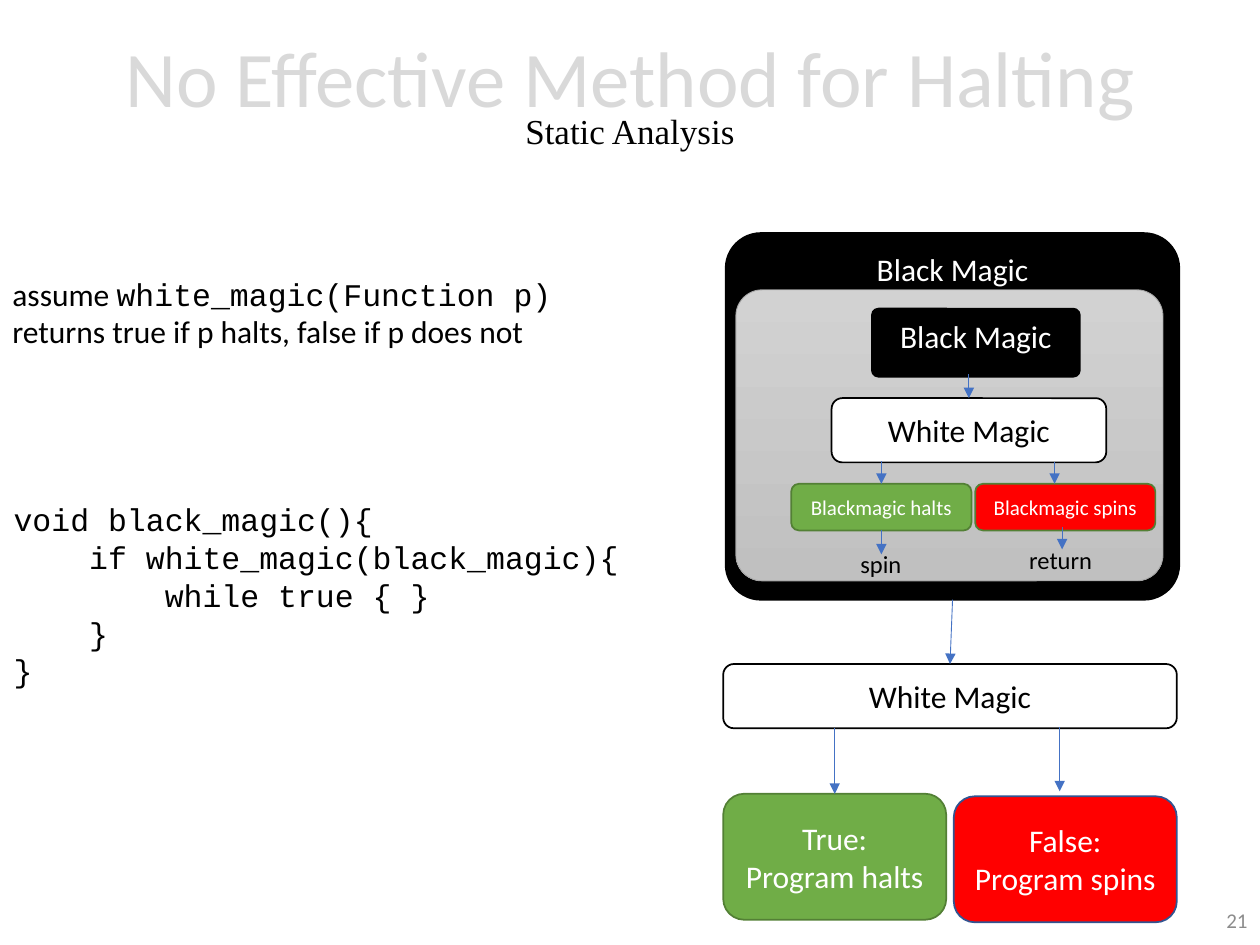
from dataclasses import dataclass
from typing import Optional

import pptx
import pptx.dml.color
import pptx.enum.shapes
import pptx.enum.text
import pptx.oxml
import pptx.oxml.ns
import pptx.util

Align = pptx.enum.text.PP_ALIGN
Anchor = pptx.enum.text.MSO_ANCHOR
Fit = pptx.enum.text.MSO_AUTO_SIZE
Pt = pptx.util.Pt

COLS, ROWS = 100, 75
WIDE, HIGH = pptx.util.Inches(10), pptx.util.Inches(7.5)


@dataclass(frozen=True)
class Theme:
    sans: str = "Calibri"
    mono: str = "Courier New"
    serif: str = "Times New Roman"
    black: str = "000000"
    white: str = "FFFFFF"
    green: str = "70AD47"
    moss: str = "538035"
    red: str = "FF0000"
    navy: str = "325491"
    blue: str = "4472C4"
    pale: str = "D9D9D9"
    gray: str = "8C8C8C"
    rim: str = "A5A5A5"
    light: str = "D2D2D2"
    dark: str = "C0C0C0"
    head: int = 45
    sub: int = 20
    body: int = 18
    note: int = 14
    small: int = 12


T = Theme()


@dataclass(frozen=True)
class Box:
    """A rounded box; lengths are grid columns and rows."""
    key: str
    x: float
    y: float
    w: float
    h: float
    lines: tuple[str, ...]
    fill: str
    edge: str
    ink: str = T.white
    size: int = T.body
    anchor: Anchor = Anchor.MIDDLE
    bend: Optional[float] = None
    fade: Optional[str] = None
    rule: float = 1


@dataclass(frozen=True)
class Arrow:
    """A downward arrow; start and end are keys of the boxes it is joined to."""
    x: float
    top: float
    foot: float
    start: Optional[str] = None
    end: Optional[str] = None


@dataclass(frozen=True)
class Note:
    x: float
    y: float
    w: float
    h: float
    lines: tuple[tuple[tuple[str, str], ...], ...]
    size: int = T.body


def col(n: float) -> int:
    return round(WIDE * n / COLS)


def row(n: float) -> int:
    return round(HIGH * n / ROWS)


def rgb(code: str) -> pptx.dml.color.RGBColor:
    return pptx.dml.color.RGBColor.from_string(code)


def add_run(para, text: str, font: str, size: int, ink: str) -> None:
    run = para.add_run()
    run.text = text
    run.font.name = font
    run.font.size = Pt(size)
    run.font.color.rgb = rgb(ink)


def next_para(frame, i: int):
    return frame.add_paragraph() if i else frame.paragraphs[0]


def add_box(slide, box: Box):
    shape = slide.shapes.add_shape(
        pptx.enum.shapes.MSO_SHAPE.ROUNDED_RECTANGLE,
        col(box.x), row(box.y), col(box.w), row(box.h))
    shape.shadow.inherit = False
    if box.bend is not None:
        shape.adjustments[0] = box.bend
    if box.fade:
        shape.fill.gradient()
        shape.fill.gradient_angle = 270
        for stop, code in zip(shape.fill.gradient_stops, (box.fill, box.fade)):
            stop.color.rgb = rgb(code)
            stop.position = float(code == box.fade)
    else:
        shape.fill.solid()
        shape.fill.fore_color.rgb = rgb(box.fill)
    shape.line.color.rgb = rgb(box.edge)
    shape.line.width = Pt(box.rule)
    frame = shape.text_frame
    frame.vertical_anchor = box.anchor
    for i, text in enumerate(box.lines):
        para = next_para(frame, i)
        para.alignment = Align.CENTER
        add_run(para, text, T.sans, box.size, box.ink)
    return shape


def add_arrow(slide, arrow: Arrow, made: dict) -> None:
    line = slide.shapes.add_connector(
        pptx.enum.shapes.MSO_CONNECTOR.STRAIGHT,
        col(arrow.x), row(arrow.top), col(arrow.x), row(arrow.foot))
    if arrow.start:
        line.begin_connect(made[arrow.start], 2)
    if arrow.end:
        line.end_connect(made[arrow.end], 0)
    line.line.color.rgb = rgb(T.blue)
    line.line.width = Pt(0.5)
    space = pptx.oxml.ns.nsdecls("a")
    line.line._get_or_add_ln().append(
        pptx.oxml.parse_xml(f'<a:tailEnd {space} type="triangle"/>'))
    line._element.spPr.append(pptx.oxml.parse_xml(f"<a:effectLst {space}/>"))


def add_note(slide, note: Note) -> None:
    frame = slide.shapes.add_textbox(
        col(note.x), row(note.y), col(note.w), row(note.h)).text_frame
    frame.word_wrap = False
    frame.auto_size = Fit.SHAPE_TO_FIT_TEXT
    for i, runs in enumerate(note.lines):
        para = next_para(frame, i)
        for text, font in runs:
            add_run(para, text, font, note.size, T.black)


def add_title(slide) -> None:
    title = slide.shapes.title
    title.left, title.top, title.width, title.height = 0, row(0.9), WIDE, row(14.5)
    frame = title.text_frame
    frame.auto_size = Fit.NONE
    frame.vertical_anchor = Anchor.MIDDLE
    para = frame.paragraphs[0]
    para.alignment = Align.CENTER
    para.line_spacing = 0.7
    add_run(para, "No Effective Method for Halting", T.sans, T.head, T.pale)
    para.add_line_break()
    add_run(para, "Static Analysis", T.serif, T.sub, T.black)


def add_number(slide, text: str) -> None:
    frame = slide.shapes.add_textbox(col(77.5), row(71), col(22.5), row(4)).text_frame
    frame.word_wrap = True
    frame.vertical_anchor = Anchor.MIDDLE
    frame.paragraphs[0].alignment = Align.RIGHT
    add_run(frame.paragraphs[0], text, T.sans, T.small, T.gray)


BLACK, WHITE = ("Black Magic",), ("White Magic",)
BOXES = (
    Box("outer white", 57.4, 52.7, 36, 5.1, WHITE, T.white, T.black, T.black),
    Box("true", 57.4, 63, 17.7, 10, ("True:", "Program halts"), T.green, T.moss),
    Box("false", 75.7, 63.2, 17.7, 10, ("False:", "Program spins"), T.red, T.navy),
    Box("outer black", 57.6, 18.5, 36, 29.1, BLACK, T.black, T.black,
        anchor=Anchor.TOP, bend=0.096),
    Box("panel", 58.4, 23, 33.9, 23.1, (), T.light, T.rim,
        bend=0.09, fade=T.dark, rule=0.5),
    Box("inner white", 66, 31.6, 21.8, 5.1, WHITE, T.white, T.black, T.black),
    Box("halts", 62.8, 38.4, 14.3, 3.7, ("Blackmagic halts",), T.green, T.moss,
        size=T.small),
    Box("spins", 77.4, 38.4, 14.3, 3.7, ("Blackmagic spins",), T.red, T.moss,
        size=T.small),
    Box("inner black", 69.2, 24.5, 16.5, 5.4, BLACK, T.black, T.black,
        anchor=Anchor.TOP, bend=0.096),
)
ARROWS = (
    Arrow(66.25, 57.8, 63, end="true"),
    Arrow(84.1, 57.7, 62.8),
    Arrow(75.5, 47.6, 52.7, "outer black", "outer white"),
    Arrow(69.95, 42.1, 44, start="halts"),
    Arrow(84.3, 41.8, 43.6),
    Arrow(69.95, 36.6, 38.4, end="halts"),
    Arrow(83.7, 36.7, 38.4),
    Arrow(76.9, 29.7, 31.6, end="inner white"),
)
CODE = ("void black_magic(){", "    if white_magic(black_magic){",
        "        while true { }", "    }", "}")
NOTES = (
    Note(0, 21.3, 45.6, 7.1, (
        (("assume ", T.sans), ("white_magic(Function p)", T.mono)),
        (("returns true if p halts, false if p does not", T.sans),))),
    Note(0.1, 39.2, 50.3, 16.2, tuple(((text, T.mono),) for text in CODE)),
    Note(67.3, 43.1, 5.3, 3.4, ((("spin", T.sans),),), T.note),
    Note(80.7, 42.8, 7.1, 3.4, ((("return", T.sans),),), T.note),
)


def main() -> None:
    deck = pptx.Presentation()
    deck.slide_width, deck.slide_height = WIDE, HIGH
    slide = deck.slides.add_slide(deck.slide_layouts[5])
    add_title(slide)
    add_number(slide, "21")
    made = {box.key: add_box(slide, box) for box in BOXES}
    for arrow in ARROWS:
        add_arrow(slide, arrow, made)
    for note in NOTES:
        add_note(slide, note)
    deck.save("out.pptx")


if __name__ == "__main__":
    main()
